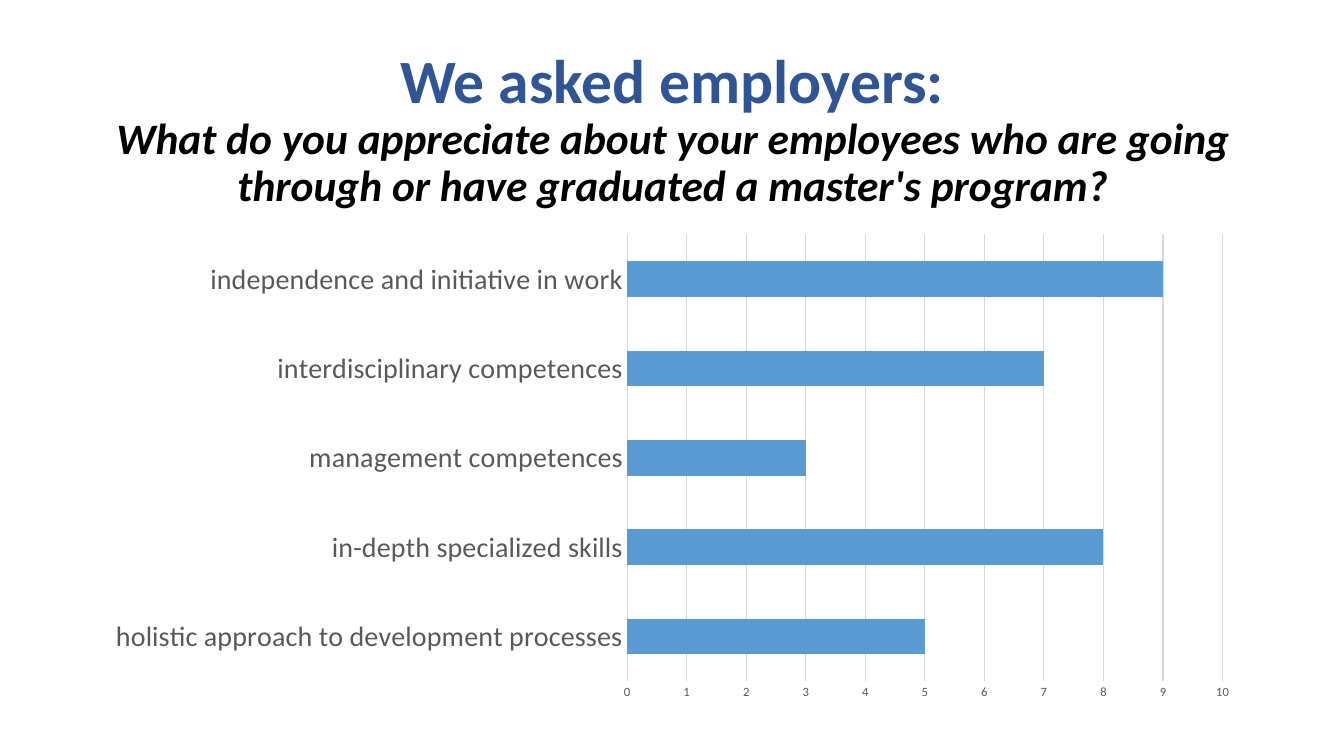
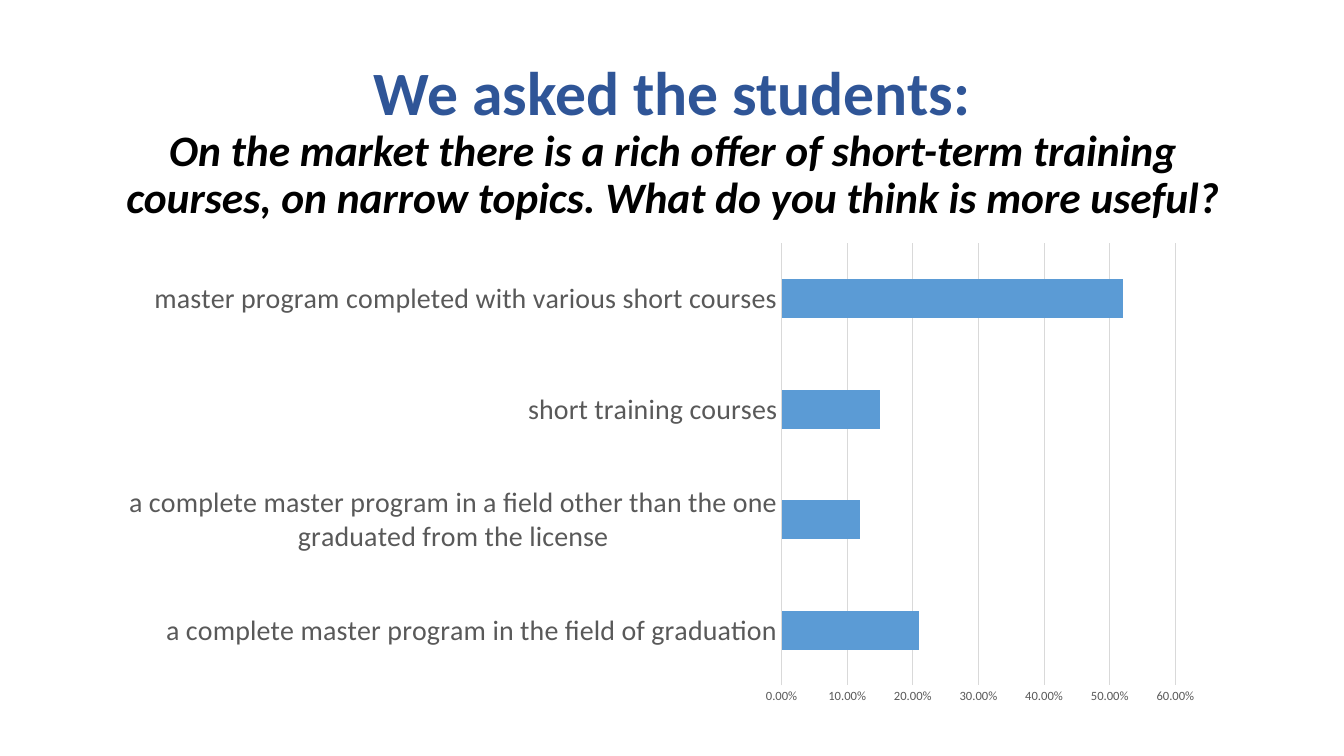
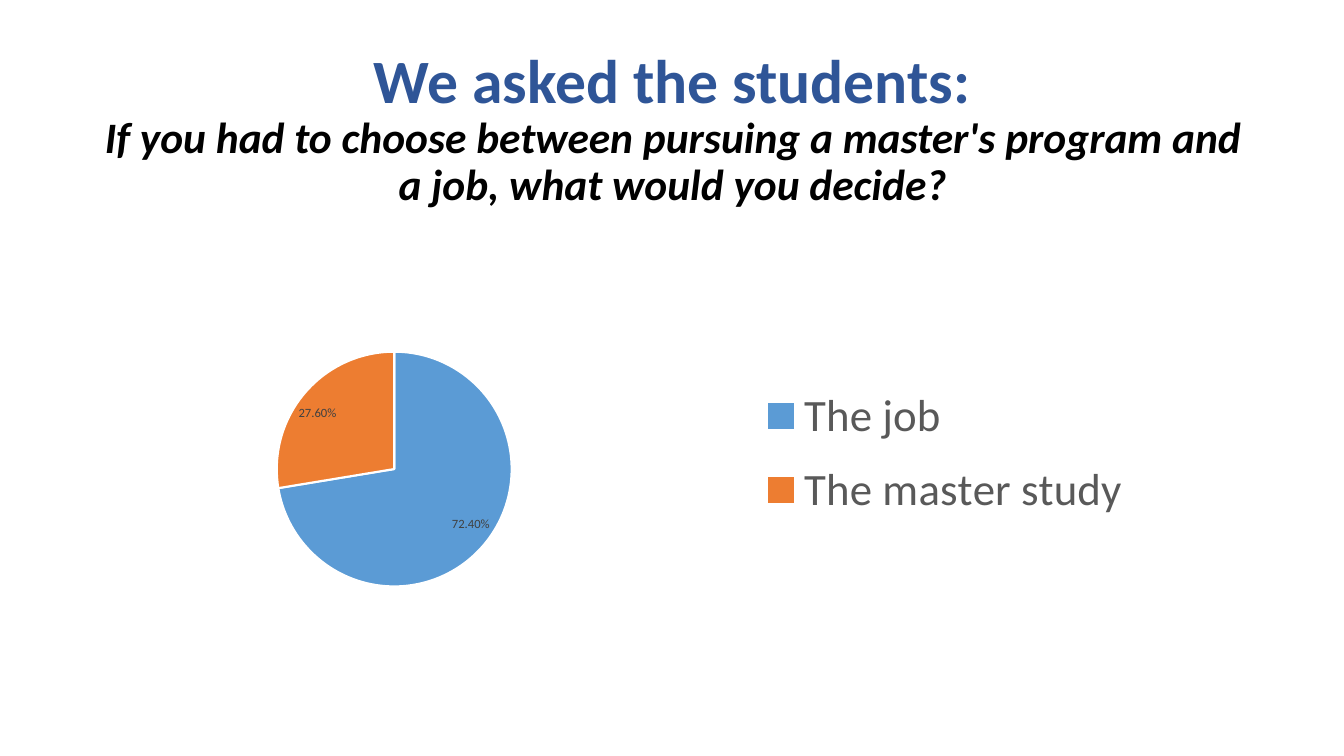
from pptx import Presentation
from pptx.chart.data import CategoryChartData as Data
from pptx.dml.color import RGBColor as RGB
from pptx.enum.chart import XL_CHART_TYPE as Kind
from pptx.enum.chart import XL_LABEL_POSITION as Spot
from pptx.enum.chart import XL_LEGEND_POSITION as Side
from pptx.enum.chart import XL_TICK_MARK as Tick
from pptx.enum.text import MSO_ANCHOR as Anchor
from pptx.enum.text import MSO_AUTO_SIZE as Fit
from pptx.enum.text import PP_ALIGN as Align
from pptx.oxml import parse_xml
from pptx.oxml.ns import nsdecls, qn
from pptx.util import Inches, Pt

FACE = "Calibri"
NAVY = RGB(0x2F, 0x55, 0x97)
BLACK = RGB(0, 0, 0)
WHITE = RGB(255, 255, 255)
BLUE = RGB(0x5B, 0x9B, 0xD5)
ORANGE = RGB(0xED, 0x7D, 0x31)
GREY = RGB(0x59, 0x59, 0x59)
DARK = RGB(0x40, 0x40, 0x40)
PALE = RGB(0xD9, 0xD9, 0xD9)
PERCENT = "0.00%"

BARS = [
    dict(
        head="We asked employers:",
        ask="What do you appreciate about your employees who are going through "
            "or have graduated a master's program?",
        title=(0.92, 0.4, 11.5, 1.79),
        box=(0.92, 2.23, 11.5, 4.81),
        rows=[
            ("holistic approach to development processes", 5),
            ("in-depth specialized skills", 8),
            ("management competences", 3),
            ("interdisciplinary competences", 7),
            ("independence and initiative in work", 9),
        ],
        form="General", gap=150, top=10, step=1, line=False,
    ),
    dict(
        head="We asked the students:",
        ask="On the market there is a rich offer of short-term training courses, "
            "on narrow topics. What do you think is more useful?",
        title=(0.92, 0.51, 11.5, 1.81),
        box=(1.28, 2.32, 10.78, 4.76),
        rows=[
            ("a complete master program in the field of graduation", 0.21),
            ("a complete master program in a field other than the one "
             "graduated from the license", 0.12),
            ("short training courses", 0.15),
            ("master program completed with various short courses", 0.52),
        ],
        form=PERCENT, gap=182, top=0.6, step=0.1, line=True,
    ),
]
PIE = dict(
    head="We asked the students:",
    ask="If you had to choose between pursuing a master's program and a job, "
        "what would you decide?",
    title=(0.92, 0.4, 11.5, 1.78),
    box=(0.92, 2.28, 11.5, 4.48),
    rows=[("The job", 0.724), ("The master study", 0.276)],
    form=PERCENT,
)


def style(font, size, color):
    font.name = FACE
    font.size = Pt(size)
    font.color.rgb = color


def add_slide(deck, page):
    slide = deck.slides.add_slide(deck.slide_layouts[5])
    title = slide.shapes.title
    title.left, title.top, title.width, title.height = map(Inches, page["title"])
    frame = title.text_frame
    frame.auto_size = Fit.NONE
    frame.vertical_anchor = Anchor.MIDDLE
    para = frame.paragraphs[0]
    para.text = page["head"] + "\v" + page["ask"]
    para.alignment = Align.CENTER
    para.line_spacing = 0.9
    head, ask = para.runs
    style(head.font, 44, NAVY)
    style(ask.font, 31, BLACK)
    head.font.bold = ask.font.bold = ask.font.italic = True
    return slide


def add_chart(slide, page, kind):
    data = Data(number_format=page["form"])
    data.categories = [name for name, _ in page["rows"]]
    data.add_series("Series 1", [val for _, val in page["rows"]])
    chart = slide.shapes.add_chart(kind, *map(Inches, page["box"]), data).chart
    chart.has_title = False
    chart.has_legend = False
    style(chart.font, 10, BLACK)
    return chart


def draw_line(line, width=0.75, color=PALE):
    line.width = Pt(width)
    line.color.rgb = color


def add_bars(deck, page):
    chart = add_chart(add_slide(deck, page), page, Kind.BAR_CLUSTERED)
    plot = chart.plots[0]
    plot.gap_width = page["gap"]
    plot.vary_by_categories = False
    fill = plot.series[0].format.fill
    fill.solid()
    fill.fore_color.rgb = BLUE
    cats, vals = chart.category_axis, chart.value_axis
    for axis, size in ((cats, 20), (vals, 9)):
        axis.major_tick_mark = axis.minor_tick_mark = Tick.NONE
        axis.format.line.fill.background()
        style(axis.tick_labels.font, size, GREY)
    if page["line"]:
        draw_line(cats.format.line)
    vals.minimum_scale = 0
    vals.maximum_scale = page["top"]
    vals.major_unit = page["step"]
    vals.tick_labels.number_format = page["form"]
    vals.tick_labels.number_format_is_linked = False
    vals.has_major_gridlines = True
    draw_line(vals.major_gridlines.format.line)


def place(part, index, area, inner=False):
    for old in part.findall(qn("c:layout")):
        part.remove(old)
    target = '<c:layoutTarget val="inner"/>' if inner else ""
    modes = "".join(f'<c:{k}Mode val="edge"/>' for k in "xy")
    sizes = "".join(f'<c:{k} val="{v}"/>' for k, v in zip("xywh", area))
    part.insert(index, parse_xml(
        f'<c:layout {nsdecls("c")}><c:manualLayout>{target}{modes}{sizes}'
        "</c:manualLayout></c:layout>"))


def add_pie(deck, page):
    chart = add_chart(add_slide(deck, page), page, Kind.PIE)
    plot = chart.plots[0]
    for i, color in enumerate((BLUE, ORANGE)):
        form = plot.series[0].points[i].format
        form.fill.solid()
        form.fill.fore_color.rgb = color
        draw_line(form.line, 1.5, WHITE)
    labels = plot.series[0].data_labels
    labels.show_value = True
    labels.show_percentage = False
    labels.number_format = page["form"]
    labels.number_format_is_linked = False
    labels.position = Spot.BEST_FIT
    style(labels.font, 9, DARK)
    chart.has_legend = True
    legend = chart.legend
    legend.position = Side.BOTTOM
    legend.include_in_layout = False
    style(legend.font, 32, GREY)
    root = chart.element.chart
    place(root.find(qn("c:plotArea")), 0, (0.11, 0.27, 0.3, 0.52), True)
    place(root.find(qn("c:legend")), 1, (0.57, 0.31, 0.33, 0.37))


def main():
    deck = Presentation()
    deck.slide_width, deck.slide_height = Inches(13.33), Inches(7.5)
    for page in BARS:
        add_bars(deck, page)
    add_pie(deck, PIE)
    deck.save("out.pptx")


if __name__ == "__main__":
    main()
